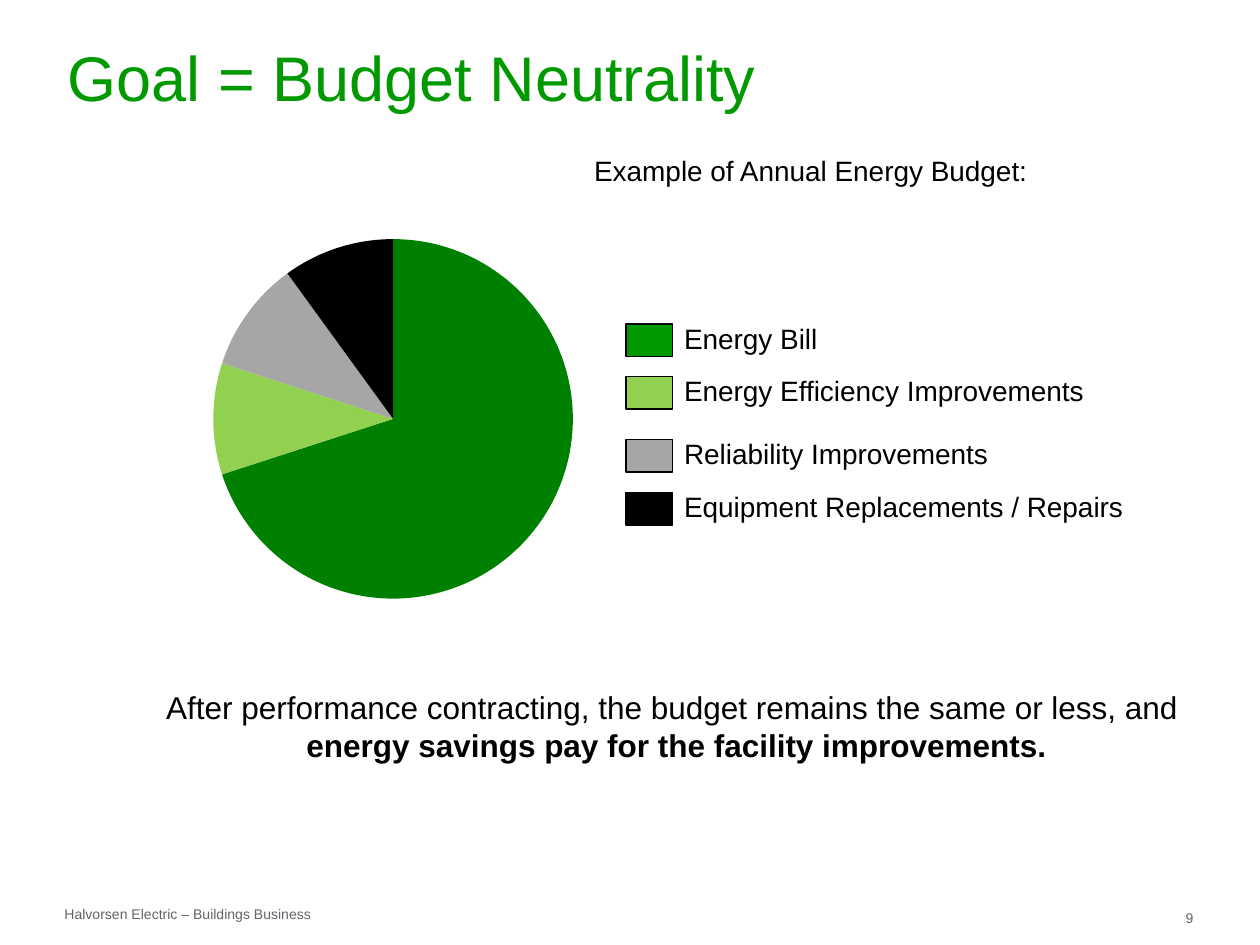
from lxml import etree
from pptx import Presentation
from pptx.chart.data import CategoryChartData
from pptx.dml.color import RGBColor
from pptx.enum.chart import XL_CHART_TYPE
from pptx.enum.shapes import MSO_SHAPE
from pptx.enum.text import PP_ALIGN
from pptx.oxml.ns import qn
from pptx.util import Cm, Pt

PIE = XL_CHART_TYPE.PIE
RECTANGLE = MSO_SHAPE.RECTANGLE
LEFT, CENTER, RIGHT = PP_ALIGN.LEFT, PP_ALIGN.CENTER, PP_ALIGN.RIGHT

COLORS = {
    "title": "009900",
    "text": "000000",
    "footer": "626469",
    "pie_green": "008000",
    "light_green": "92D050",
    "gray": "A6A6A6",
    "black": "000000",
}
BUDGET = [
    ("Energy Bill", 70, "pie_green", "title", 6.53),
    ("Energy Efficiency Improvements", 10, "light_green", "light_green", 7.59),
    ("Reliability Improvements", 10, "gray", "gray", 8.86),
    ("Equipment Replacements / Repairs", 10, "black", "black", 9.93),
]


class BudgetSlide:
    """Holds the text style and the slide, and adds each kind of element in centimetres."""

    font_name = "Arial"

    def __init__(self, slide):
        self.slide = slide

    def color(self, name):
        return RGBColor.from_string(COLORS[name])

    def text(self, lines, box, size, color="text", align=LEFT, wrap=True, inset=True):
        shape = self.slide.shapes.add_textbox(*map(Cm, box))
        frame = shape.text_frame
        frame.word_wrap = wrap
        if not inset:
            frame.margin_left = frame.margin_right = 0
            frame.margin_top = frame.margin_bottom = 0
        frame.text = "\n".join(lines)
        for paragraph in frame.paragraphs:
            paragraph.alignment = align
            paragraph.font.name = self.font_name
            paragraph.font.size = Pt(size)
            paragraph.font.color.rgb = self.color(color)
        return frame

    def swatch(self, box, color):
        shape = self.slide.shapes.add_shape(RECTANGLE, *map(Cm, box))
        shape.shadow.inherit = False
        shape.fill.solid()
        shape.fill.fore_color.rgb = self.color(color)
        shape.line.color.rgb = self.color("black")
        shape.line.width = Pt(0.97)

    def pie(self, box, labels, values, colors):
        data = CategoryChartData()
        data.categories = labels
        data.add_series("Annual Energy Budget", values)
        chart = self.slide.shapes.add_chart(PIE, *map(Cm, box), data).chart
        chart.has_legend = False
        chart.has_title = False
        chart.font.name = self.font_name
        chart.font.size = Pt(16)
        plot = chart.plots[0]
        plot.vary_by_categories = True
        for index, color in enumerate(colors):
            point_format = plot.series[0].points[index].format
            point_format.fill.solid()
            point_format.fill.fore_color.rgb = self.color(color)
            point_format.line.fill.background()
        self.fill_frame(chart)

    def fill_frame(self, chart):
        plot_area = chart.element.find(".//" + qn("c:plotArea"))
        layout = plot_area.find(qn("c:layout"))
        if layout is None:
            layout = etree.Element(qn("c:layout"))
            plot_area.insert(0, layout)
        manual = etree.SubElement(layout, qn("c:manualLayout"))
        settings = [("layoutTarget", "inner"), ("xMode", "edge"), ("yMode", "edge"),
                    ("x", "0"), ("y", "0"), ("w", "1"), ("h", "1")]
        for name, value in settings:
            etree.SubElement(manual, qn("c:" + name)).set("val", value)


def main():
    presentation = Presentation()
    presentation.slide_width = Cm(25.4)
    presentation.slide_height = Cm(19.05)
    budget = BudgetSlide(presentation.slides.add_slide(presentation.slide_layouts[6]))

    budget.text(["Halvorsen Electric – Buildings Business"], (1.3, 18.26, 5.05, 0.33), 8,
                "footer", wrap=False, inset=False)
    budget.text(["9"], (23.9, 18.34, 0.81, 0.2), 8, "footer", inset=False)

    labels, values, slice_colors, swatch_colors, tops = zip(*BUDGET)
    budget.pie((4.3, 4.82, 7.25, 7.25), labels, values, slice_colors)
    for label, color, top in zip(labels, swatch_colors, tops):
        budget.swatch((12.62, top, 0.94, 0.66), color)
        budget.text([label], (13.54, top - 0.18, 11, 0.94), 16)

    budget.text(["Goal = Budget Neutrality"], (1.12, 0.66, 23.19, 1.8), 36, "title")
    message = budget.text(
        ["After performance contracting, the budget remains the same or less, and ",
         "energy savings pay for the facility improvements."],
        (3, 13.74, 21.28, 1.8), 18, align=CENTER, wrap=False)
    message.paragraphs[1].font.bold = True
    budget.text(["Example of Annual Energy Budget:"], (10.16, 2.97, 10.8, 0.94), 16, align=RIGHT)

    presentation.save("out.pptx")


if __name__ == "__main__":
    main()
